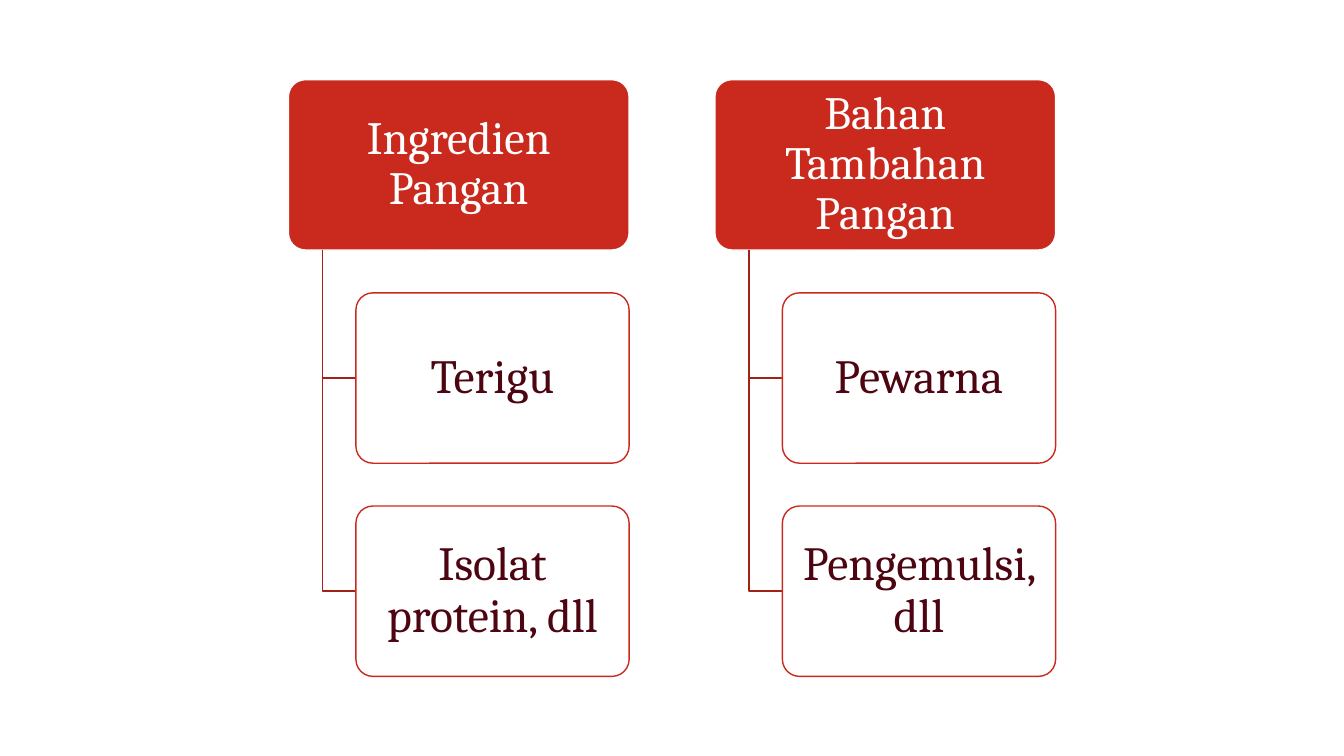
from pptx import Presentation
from pptx.dml.color import RGBColor
from pptx.enum.shapes import MSO_SHAPE
from pptx.enum.text import MSO_ANCHOR, PP_ALIGN
from pptx.util import Inches, Pt

ROUNDED = MSO_SHAPE.ROUNDED_RECTANGLE
MIDDLE = MSO_ANCHOR.MIDDLE
CENTER = PP_ALIGN.CENTER

FONT = "Cambria"
COLORS = {
    "red": "CA2A1E",
    "branch": "A22218",
    "maroon": "4D0511",
    "white": "FFFFFF",
}

CARD_HEIGHT = 1.69
ROW_PITCH = 2.115
TRUNK_INDENT = 0.34
ITEM_INDENT = 0.67

COLUMN_LEFT = 2.86
COLUMN_TOP = 0.79
COLUMN_WIDTH = 3.38
COLUMN_PITCH = 4.23

CATEGORIES = [
    ("Ingredien Pangan", ["Terigu", "Isolat protein, dll"]),
    ("Bahan Tambahan Pangan", ["Pewarna", "Pengemulsi, dll"]),
]


def color(name):
    return RGBColor.from_string(COLORS[name])


def add_card(slide, left, top, width, text, size, fill, line, text_color):
    card = slide.shapes.add_shape(
        ROUNDED, Inches(left), Inches(top), Inches(width), Inches(CARD_HEIGHT)
    )
    card.adjustments[0] = 0.1
    card.shadow.inherit = False
    card.fill.solid()
    card.fill.fore_color.rgb = color(fill)
    card.line.color.rgb = color(line)
    card.line.width = Pt(1)

    text_frame = card.text_frame
    text_frame.word_wrap = True
    text_frame.vertical_anchor = MIDDLE
    text_frame.margin_left = text_frame.margin_right = Inches(0.12)
    text_frame.margin_top = text_frame.margin_bottom = Inches(0.1)
    text_frame.text = text
    paragraph = text_frame.paragraphs[0]
    paragraph.alignment = CENTER
    paragraph.line_spacing = 0.9
    font = paragraph.runs[0].font
    font.name = FONT
    font.size = Pt(size)
    font.color.rgb = color(text_color)


def add_branch(slide, trunk, top, item_left, item_middle):
    builder = slide.shapes.build_freeform(Inches(trunk), Inches(top))
    corners = [(trunk, item_middle), (item_left, item_middle)]
    builder.add_line_segments(
        [(Inches(x), Inches(y)) for x, y in corners], close=False
    )
    branch = builder.convert_to_shape()
    branch.shadow.inherit = False
    branch.fill.background()
    branch.line.color.rgb = color("branch")
    branch.line.width = Pt(1)


def add_category(slide, left, top, width, heading, items):
    add_card(slide, left, top, width, heading, 33, "red", "white", "white")
    item_left = left + ITEM_INDENT
    for row, item in enumerate(items, start=1):
        item_top = top + row * ROW_PITCH
        add_branch(
            slide, left + TRUNK_INDENT, top + CARD_HEIGHT,
            item_left, item_top + CARD_HEIGHT / 2,
        )
        add_card(
            slide, item_left, item_top, width - ITEM_INDENT,
            item, 34, "white", "red", "maroon",
        )


def main():
    presentation = Presentation()
    presentation.slide_width = Inches(13.33)
    presentation.slide_height = Inches(7.5)
    slide = presentation.slides.add_slide(presentation.slide_layouts[6])
    for index, (heading, items) in enumerate(CATEGORIES):
        left = COLUMN_LEFT + index * COLUMN_PITCH
        add_category(slide, left, COLUMN_TOP, COLUMN_WIDTH, heading, items)
    presentation.save("out.pptx")


if __name__ == "__main__":
    main()
